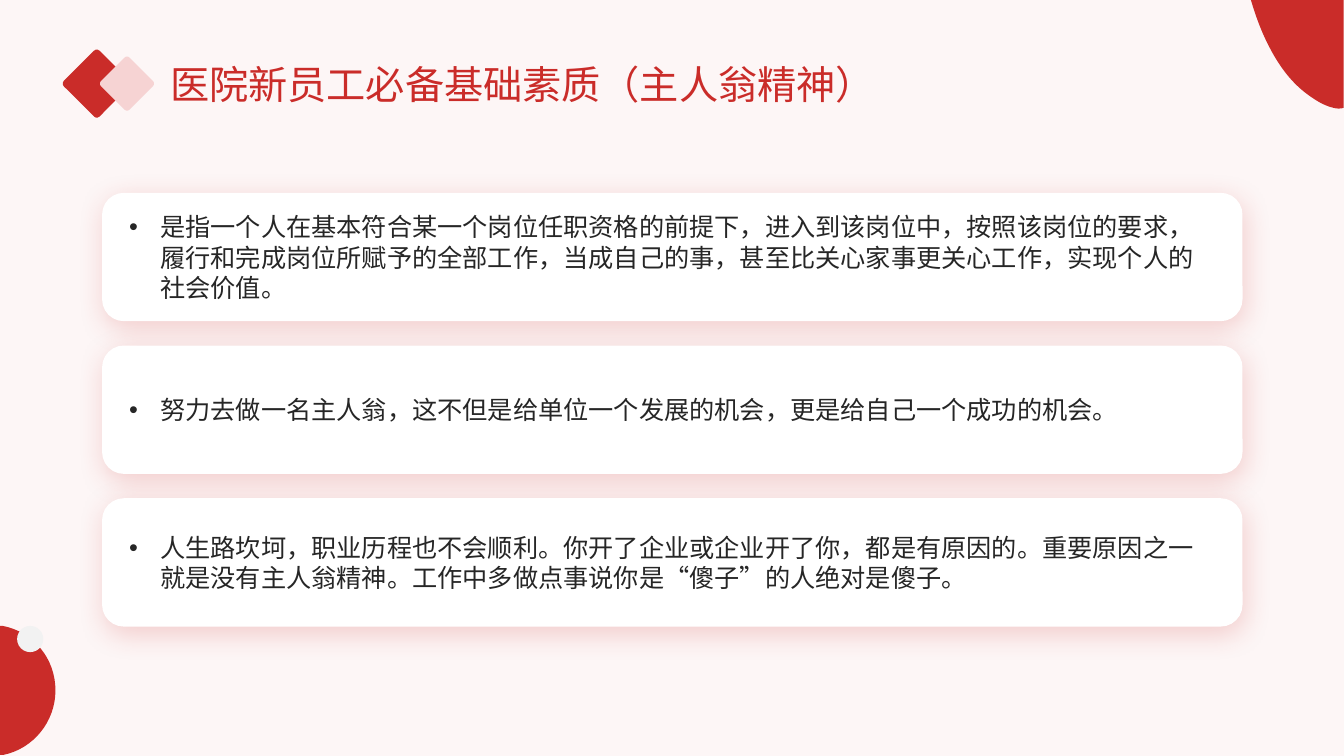
from dataclasses import dataclass

from lxml.etree import SubElement
from pptx import Presentation
from pptx.dml.color import RGBColor
from pptx.enum.shapes import MSO_SHAPE as Shape
from pptx.enum.text import MSO_ANCHOR as Anchor, MSO_AUTO_SIZE as AutoSize, PP_ALIGN as Align
from pptx.oxml.ns import qn
from pptx.util import Inches, Pt

Point = tuple[float, float]


@dataclass(frozen=True)
class Theme:
    red: str = "CA2C29"
    pink: str = "F6D3D3"
    white: str = "FFFFFF"
    dot: str = "F2F2F2"
    text: str = "262626"
    font: str = "Noto Sans CJK SC"
    title_size: int = 28
    body_size: int = 18
    tint: int = 20


@dataclass(frozen=True)
class Preset:
    kind: Shape
    left: float
    top: float
    width: float
    height: float
    color: str
    rotation: float = 0
    corner: float | None = None


@dataclass(frozen=True)
class Blob:
    """Each segment is one point (straight) or three points (Bézier)."""
    start: Point
    segments: tuple[tuple[Point, ...], ...]


THEME = Theme()
WIDTH, HEIGHT = 40 / 3, 7.5
EDGE = 13.33
CARD_LEFT, CARD_WIDTH, CARD_HEIGHT = 1.02, 11.3, 1.26
FIRST_TOP, LAST_TOP = 1.92, 4.95
BULLET_INDENT = 0.31

TITLE = "医院新员工必备基础素质（主人翁精神）"
CARDS = (
    "是指一个人在基本符合某一个岗位任职资格的前提下，进入到该岗位中，按照该岗位的要求，"
    "履行和完成岗位所赋予的全部工作，当成自己的事，甚至比关心家事更关心工作，实现个人的社会价值。",
    "努力去做一名主人翁，这不但是给单位一个发展的机会，更是给自己一个成功的机会。",
    "人生路坎坷，职业历程也不会顺利。你开了企业或企业开了你，都是有原因的。"
    "重要原因之一就是没有主人翁精神。工作中多做点事说你是“傻子”的人绝对是傻子。",
)

TOP_BLOB = Blob((EDGE, 0), (
    ((EDGE, 0.35), (EDGE, 0.69), (EDGE, 1.04)),
    ((EDGE, 1.05), (EDGE, 1.06), (EDGE, 1.07)),
    ((13.3, 1.08), (13.26, 1.08), (13.23, 1.07)),
    ((13.14, 1.05), (13.06, 1), (12.99, 0.95)),
    ((12.82, 0.83), (12.7, 0.67), (12.6, 0.48)),
    ((12.52, 0.33), (12.46, 0.17), (12.41, 0)),
    ((12.72, 0), (13.03, 0), (EDGE, 0)),
))
BOTTOM_BLOB = Blob((0, 6.21), (
    ((0, 7.49),),
    ((0.03, 7.49),),
    ((0.33, 7.43), (0.55, 7.16), (0.55, 6.85)),
    ((0.55, 6.53), (0.33, 6.27), (0.03, 6.21)),
))
CORNER_DOT = Preset(Shape.OVAL, 0.17, 6.21, 0.26, 0.26, THEME.dot)
DIAMONDS = (
    Preset(Shape.ROUNDED_RECTANGLE, 0.71, 0.58, 0.5, 0.5, THEME.red, 45, 0.076),
    Preset(Shape.ROUNDED_RECTANGLE, 1.06, 0.63, 0.4, 0.4, THEME.pink, 45, 0.085),
)


def rgb(color: str) -> RGBColor:
    return RGBColor.from_string(color)


def add_alpha(color_element, percent: int) -> None:
    SubElement(color_element, qn("a:alpha"), val=str(percent * 1000))


def paint(sp, color: str) -> None:
    sp.shadow.inherit = False
    sp.fill.solid()
    sp.fill.fore_color.rgb = rgb(color)
    sp.line.fill.background()


def add_preset(shapes, item: Preset):
    box = (Inches(v) for v in (item.left, item.top, item.width, item.height))
    sp = shapes.add_shape(item.kind, *box)
    sp.rotation = item.rotation
    if item.corner is not None:
        sp.adjustments[0] = item.corner
    paint(sp, item.color)
    return sp


def add_blob(shapes, blob: Blob) -> None:
    start, *ends = [(Inches(x), Inches(y))
                    for x, y in (blob.start, *(s[-1] for s in blob.segments))]
    builder = shapes.build_freeform(*start)
    builder.add_line_segments(ends, close=True)
    sp = builder.convert_to_shape()
    paint(sp, THEME.red)

    # Bend the straight segments that carry control points
    lines = list(sp._element.iter(qn("a:lnTo")))
    for line, segment in zip(lines, blob.segments):
        if len(segment) == 3:
            line.tag = qn("a:cubicBezTo")
            line.clear()
            for x, y in segment:
                SubElement(line, qn("a:pt"), x=str(Inches(x) - sp.left),
                           y=str(Inches(y) - sp.top))


def add_run(p, text: str, size: int, color: str) -> None:
    r = p.add_run()
    r.text = text
    r.font.size = Pt(size)
    r.font.name = THEME.font
    r.font.color.rgb = rgb(color)
    props = r.font._element
    props.set("lang", "zh-CN")
    SubElement(props, qn("a:ea")).set("typeface", THEME.font)


def add_title(shapes) -> None:
    sp = shapes.add_textbox(Inches(1.59), Inches(0.55), Inches(7.27), Inches(0.57))
    tf = sp.text_frame
    tf.word_wrap = False
    tf.auto_size = AutoSize.SHAPE_TO_FIT_TEXT
    add_run(tf.paragraphs[0], TITLE, THEME.title_size, THEME.red)


def add_glow(sp) -> None:
    effects = sp._element.spPr.find(qn("a:effectLst"))
    shadow = SubElement(effects, qn("a:outerShdw"), blurRad=str(Pt(20)), dist=str(Pt(4)),
                        dir="5400000", algn="t", rotWithShape="0")
    add_alpha(SubElement(shadow, qn("a:srgbClr"), val=THEME.red), THEME.tint)


def add_card(shapes, top: float, text: str) -> None:
    sp = add_preset(shapes, Preset(Shape.ROUNDED_RECTANGLE, CARD_LEFT, top,
                                   CARD_WIDTH, CARD_HEIGHT, THEME.white))
    sp.line.color.rgb = rgb(THEME.white)
    sp.line.width = Pt(1)
    add_glow(sp)
    tf = sp.text_frame
    tf.word_wrap = True
    tf.vertical_anchor = Anchor.MIDDLE
    tf.margin_left = tf.margin_right = Inches(0.2)
    tf.margin_top = tf.margin_bottom = Inches(0.05)
    p = tf.paragraphs[0]
    p.alignment = Align.LEFT
    props = p._p.get_or_add_pPr()
    props.set("marL", str(Inches(BULLET_INDENT)))
    props.set("indent", str(-Inches(BULLET_INDENT)))
    SubElement(props, qn("a:buFont")).set("typeface", "Arial")
    SubElement(props, qn("a:buChar")).set("char", "•")
    add_run(p, text, THEME.body_size, THEME.text)


def main() -> None:
    prs = Presentation()
    prs.slide_width, prs.slide_height = Inches(WIDTH), Inches(HEIGHT)
    slide = prs.slides.add_slide(prs.slide_layouts[6])
    shapes = slide.shapes

    # Pale pink background
    fill = slide.background.fill
    fill.solid()
    fill.fore_color.rgb = rgb(THEME.pink)
    add_alpha(next(slide._element.iter(qn("a:srgbClr"))), THEME.tint)

    # Corner decorations
    add_blob(shapes, TOP_BLOB)
    corner = shapes.add_group_shape().shapes
    add_blob(corner, BOTTOM_BLOB)
    add_preset(corner, CORNER_DOT)

    # Title with its diamonds
    add_title(shapes)
    emblem = shapes.add_group_shape().shapes
    for diamond in DIAMONDS:
        add_preset(emblem, diamond)

    # Evenly spaced text cards
    pitch = (LAST_TOP - FIRST_TOP) / (len(CARDS) - 1)
    for row, text in enumerate(CARDS):
        add_card(shapes, FIRST_TOP + row * pitch, text)

    prs.save("out.pptx")


if __name__ == "__main__":
    main()
